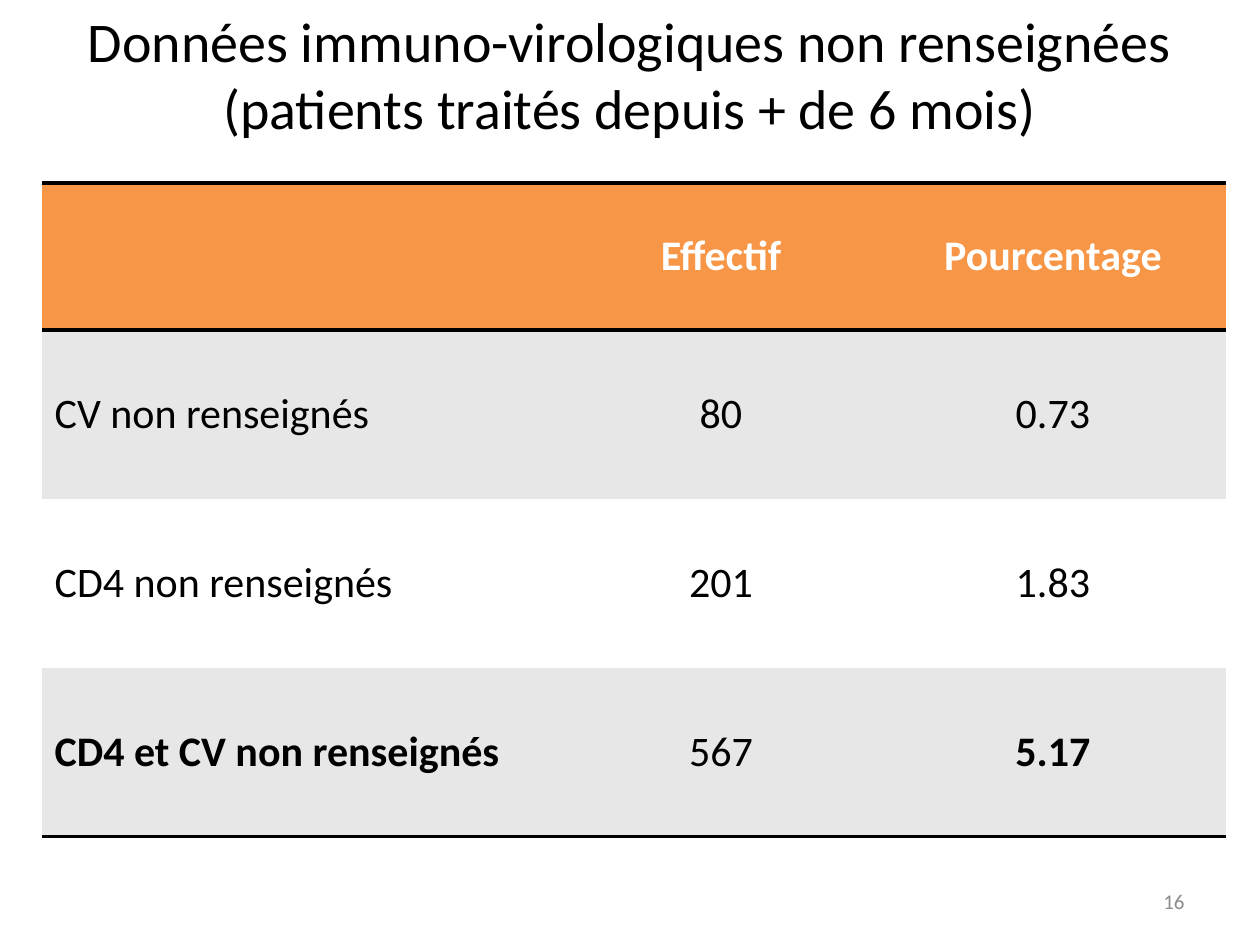
from lxml import etree
from pptx import Presentation
from pptx.dml.color import RGBColor
from pptx.enum.text import MSO_ANCHOR as Anchor, MSO_AUTO_SIZE as AutoSize, PP_ALIGN as Align
from pptx.oxml.ns import qn
from pptx.util import Emu, Pt

FONT = "Calibri"
COLORS = {"text": "000000", "header": "F79646", "header_text": "FFFFFF",
          "band": "E7E7E7", "plain": "FFFFFF", "rule": "000000", "number": "8C8C8C"}
NO_GRID_STYLE = "{2D5ABB26-0587-4C30-8999-92F81FD0307C}"


def px(n):
    return Emu(round(n * 914400 / 126))


def rgb(name):
    return RGBColor.from_string(COLORS[name])


def write(tf, text, size=24, color="text", bold=False, align=Align.LEFT):
    p = tf.paragraphs[0]
    p.alignment = align
    r = p.add_run()
    r.text = text
    r.font.name, r.font.size, r.font.bold = FONT, Pt(size), bold
    r.font.color.rgb = rgb(color)


def add_rules(cell, sides):
    """Draw 2 pt rules on the given sides; they must precede the cell's fill."""
    tc_pr = cell._tc.get_or_add_tcPr()
    for i, side in enumerate(sides):
        ln = etree.Element(qn(f"a:ln{side}"), w=str(Pt(2)))
        fill = etree.SubElement(ln, qn("a:solidFill"))
        etree.SubElement(fill, qn("a:srgbClr"), val=COLORS["rule"])
        tc_pr.insert(i, ln)


class SlideBuilder:
    def __init__(self, prs):
        self.s = prs.slides.add_slide(prs.slide_layouts[5])

    def title(self, text, x, y, w, h):
        sp = self.s.shapes.title
        sp.left, sp.top, sp.width, sp.height = map(px, (x, y, w, h))
        tf = sp.text_frame
        tf.word_wrap = True
        tf.auto_size = AutoSize.SHAPE_TO_FIT_TEXT
        tf.vertical_anchor = Anchor.TOP
        write(tf, text, size=32, align=Align.CENTER)

    def slide_number(self, text, x, y, w, h):
        tf = self.s.shapes.add_textbox(*map(px, (x, y, w, h))).text_frame
        tf.word_wrap = True
        tf.vertical_anchor = Anchor.MIDDLE
        write(tf, text, size=12, color="number", align=Align.RIGHT)

    def table(self, rows, x, y, widths, heights, bold_cells):
        frame = self.s.shapes.add_table(len(rows), len(widths), px(x), px(y),
                                        px(sum(widths)), px(sum(heights)))
        table = frame.table
        table._tbl.tblPr.find(qn("a:tableStyleId")).text = NO_GRID_STYLE
        for column, w in zip(table.columns, widths):
            column.width = px(w)
        for row, h in zip(table.rows, heights):
            row.height = px(h)

        for i, values in enumerate(rows):
            header = i == 0
            fill = "header" if header else "band" if i % 2 else "plain"
            sides = "TB" if header else "B" if i == len(rows) - 1 else ""
            for j, value in enumerate(values):
                cell = table.cell(i, j)
                cell.vertical_anchor = Anchor.MIDDLE
                cell.fill.solid()
                cell.fill.fore_color.rgb = rgb(fill)
                add_rules(cell, sides)
                if value:
                    write(cell.text_frame, value,
                          color="header_text" if header else "text",
                          bold=header or (i, j) in bold_cells,
                          align=Align.CENTER if j else Align.LEFT)


def main():
    prs = Presentation()
    prs.slide_width, prs.slide_height = px(1260), px(945)
    slide = SlideBuilder(prs)

    # Title
    slide.title("Données immuno-virologiques non renseignées "
                "(patients traités depuis + de 6 mois)", 0, 0, 1260, 149)

    # Missing data table
    rows = [("", "Effectif", "Pourcentage"),
            ("CV non renseignés", "80", "0.73"),
            ("CD4 non renseignés", "201", "1.83"),
            ("CD4 et CV non renseignés", "567", "5.17")]
    slide.table(rows, 42, 183, widths=(520, 318, 346), heights=(147, 169, 169, 169),
                bold_cells={(3, 0), (3, 2)})

    # Slide number
    slide.slide_number("16", 903, 876, 294, 50)

    prs.save("out.pptx")


if __name__ == "__main__":
    main()
